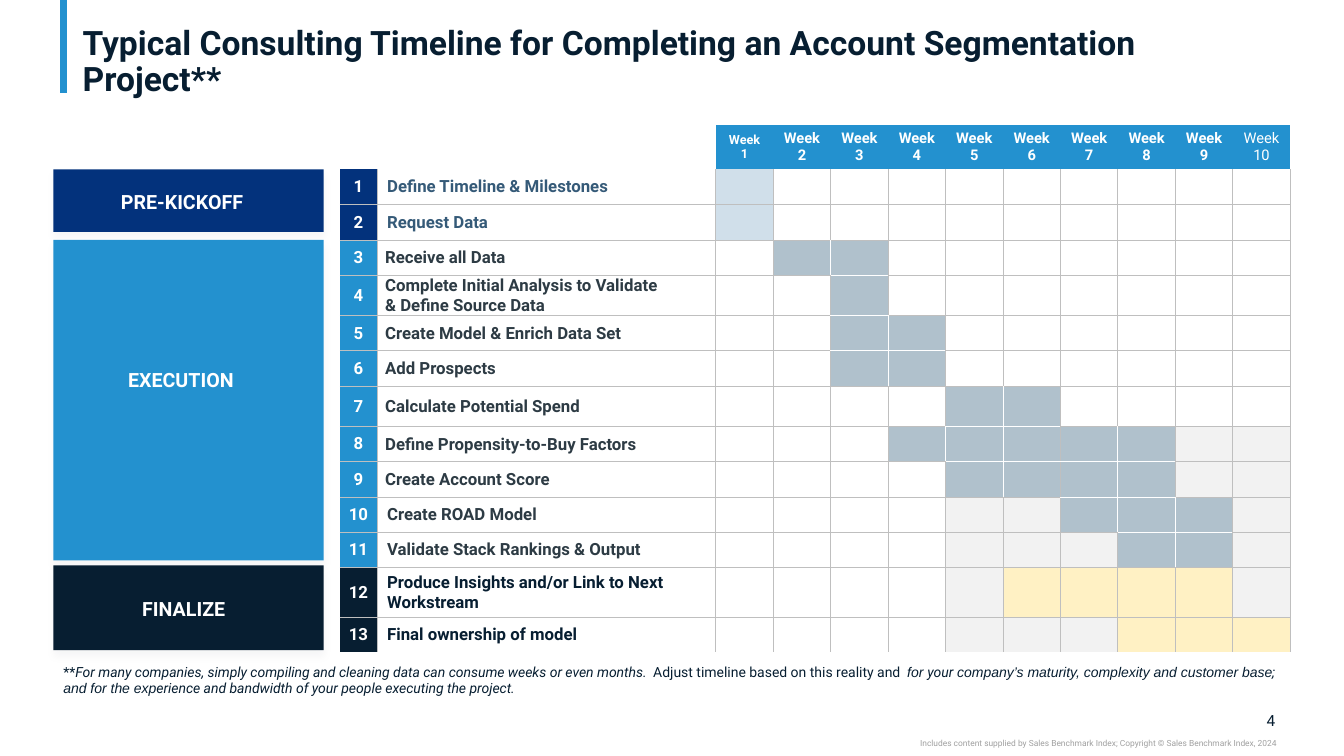
from dataclasses import dataclass

from lxml import etree
from pptx import Presentation
from pptx import util as u
from pptx.enum import shapes, text
from pptx.dml.color import RGBColor
from pptx.oxml import ns

COLOURS = {
    "ink": "071E31", "blue": "2391CF", "navy": "03327C", "white": "FFFFFF",
    "grid": "BFBFBF", "slate": "355A78", "charcoal": "2D3B44", "credit": "A0A0A0",
    "pale": "D0DFEA", "steel": "B0C1CC", "yellow": "FFF1C4", "idle": "F2F2F2",
}
WEEKS = 10
LAST_WEEK_BEFORE_REVIEW = 6
NORMAL_INSETS = (0.1, 0.05, 0.1, 0.05)
TIGHT_INSETS = (0.08, 0.01, 0.01, 0)
NO_INSETS = (0, 0, 0, 0)
LEFT, CENTRE, RIGHT = text.PP_ALIGN.LEFT, text.PP_ALIGN.CENTER, text.PP_ALIGN.RIGHT
TOP, MIDDLE = text.MSO_ANCHOR.TOP, text.MSO_ANCHOR.MIDDLE


@dataclass
class Span:
    words: str
    size: float
    colour: str = "ink"
    bold: bool = False
    italic: bool = False
    font: str = "Roboto"


@dataclass
class Phase:
    name: str
    fill: str
    task_colour: str
    bar: str
    top: float
    height: float
    label_at: tuple[float, float, float]


@dataclass
class Task:
    name: str
    phase: Phase
    start: int
    end: int
    idle_from: int = WEEKS + 1
    height: float = 0.35
    insets: tuple = NORMAL_INSETS

    def week_fill(self, week: int) -> str:
        if self.start <= week <= self.end:
            return self.phase.bar
        return "idle" if week >= self.idle_from else "white"


PRE = Phase("PRE-KICKOFF", "navy", "slate", "pale", 1.68, 0.62, (1.2, 1.88, 1.34))
EXECUTION = Phase("EXECUTION", "blue", "charcoal", "steel", 2.38, 3.18, (1.27, 3.65, 1.21))
FINALIZE = Phase("FINALIZE", "ink", "ink", "yellow", 5.61, 0.84, (1.41, 5.92, 0.92))

TASKS = [
    Task("Define Timeline & Milestones", PRE, 1, 1),
    Task("Request Data", PRE, 1, 1),
    Task("Receive all Data", EXECUTION, 2, 3, insets=TIGHT_INSETS),
    Task("Complete Initial Analysis to Validate \n& Define Source Data", EXECUTION, 3, 3,
         height=0.28, insets=TIGHT_INSETS),
    Task("Create Model & Enrich Data Set", EXECUTION, 3, 4, insets=TIGHT_INSETS),
    Task("Add Prospects", EXECUTION, 3, 4, insets=TIGHT_INSETS),
    Task("Calculate Potential Spend", EXECUTION, 5, 6, height=0.4, insets=TIGHT_INSETS),
    Task("Define Propensity-to-Buy Factors", EXECUTION, 4, 8, 9, insets=TIGHT_INSETS),
    Task("Create Account Score", EXECUTION, 5, 8, 9, insets=TIGHT_INSETS),
    Task("Create ROAD Model", EXECUTION, 7, 9, 5),
    Task("Validate Stack Rankings & Output", EXECUTION, 8, 9, 5),
    Task("Produce Insights and/or Link to Next Workstream", FINALIZE, 6, 9, 5),
    Task("Final ownership of model", FINALIZE, 8, 10, 5),
]

FOOTNOTE = [
    Span("**", 10),
    Span("For many companies, simply compiling and cleaning data can consume weeks "
         "or even months.  ", 10, italic=True),
    Span("Adjust timeline based on this reality and  ", 10),
    Span("for ", 10, italic=True, font="Arial"),
    Span("your", 10, italic=True),
    Span(" company’s maturity, complexity and customer base", 10, italic=True, font="Arial"),
    Span("; ", 10, italic=True),
    Span("and for the exp", 10, italic=True, font="Arial"),
    Span("erience and bandwidth of your people executing the project.", 10, italic=True),
]


def rgb(name: str) -> RGBColor:
    return RGBColor.from_string(COLOURS[name])


def set_insets(holder, insets: tuple) -> None:
    for side, inset in zip(("left", "top", "right", "bottom"), insets):
        setattr(holder, f"margin_{side}", u.Inches(inset))


def write(frame, spans: list[Span], align=LEFT) -> None:
    para = frame.paragraphs[0]
    para.alignment = align
    for span in spans:
        for number, line in enumerate(span.words.split("\n")):
            if number:
                para.add_line_break()
            run = para.add_run()
            run.text = line
            formats = {"size": u.Pt(span.size), "bold": span.bold,
                       "italic": span.italic, "name": span.font}
            for key, value in formats.items():
                setattr(run.font, key, value)
            run.font.color.rgb = rgb(span.colour)


def format_frame(frame, insets: tuple, anchor) -> None:
    formats = {"word_wrap": True, "auto_size": text.MSO_AUTO_SIZE.NONE,
               "vertical_anchor": anchor}
    for key, value in formats.items():
        setattr(frame, key, value)
    set_insets(frame, insets)


def add_text(page, at: tuple, spans: list[Span], align=LEFT, insets=NO_INSETS, anchor=TOP) -> None:
    box = page.shapes.add_textbox(*map(u.Inches, at))
    format_frame(box.text_frame, insets, anchor)
    write(box.text_frame, spans, align)


def add_title(page) -> None:
    title = page.shapes.title
    places = {"left": 0.72, "top": 0.02, "width": 12.08, "height": 1.2}
    for key, value in places.items():
        setattr(title, key, u.Inches(value))
    format_frame(title.text_frame, NORMAL_INSETS, MIDDLE)
    words = "Typical Consulting Timeline for Completing an Account Segmentation Project**"
    write(title.text_frame, [Span(words, 24, bold=True)])
    title.text_frame.paragraphs[0].line_spacing = 0.9


def add_accent(page) -> None:
    accent = page.shapes.add_connector(
        shapes.MSO_CONNECTOR.STRAIGHT, *map(u.Inches, (0.63, 0, 0.63, 0.92)))
    accent.line.color.rgb = rgb("blue")
    accent.line.width = u.Pt(5)
    etree.SubElement(accent._element.spPr, ns.qn("a:effectLst"))


def add_phase(page, phase: Phase) -> None:
    box = page.shapes.add_shape(
        shapes.MSO_SHAPE.RECTANGLE, *map(u.Inches, (0.53, phase.top, 2.68, phase.height)))
    box.fill.solid()
    box.fill.fore_color.rgb = rgb(phase.fill)
    box.line.fill.background()
    box.shadow.inherit = False
    effects = box._element.spPr.find(ns.qn("a:effectLst"))
    shadow = etree.SubElement(effects, ns.qn("a:outerShdw"), blurRad=str(u.Pt(6)),
                              dist=str(u.Pt(4)), dir="5400000", rotWithShape="0")
    colour = etree.SubElement(shadow, ns.qn("a:srgbClr"), val=COLOURS["ink"])
    etree.SubElement(colour, ns.qn("a:alpha"), val="4000")


def paint(cell, fill: str, borders: dict) -> None:
    properties = cell._tc.get_or_add_tcPr()
    for side in "LRTB":
        line = etree.SubElement(properties, ns.qn(f"a:ln{side}"), w=str(u.Pt(0.75)))
        colour = borders.get(side)
        paint_kind = etree.SubElement(line, ns.qn("a:solidFill" if colour else "a:noFill"))
        if colour:
            etree.SubElement(paint_kind, ns.qn("a:srgbClr"), val=COLOURS[colour])
    cell.fill.solid()
    cell.fill.fore_color.rgb = rgb(fill)


def cell_borders(fills: list[list[str]], row: int, column: int) -> dict:
    def edge(other_row: int, other_column: int) -> str:
        week_boundary = {column - 1, other_column - 1}
        review = week_boundary == {LAST_WEEK_BEFORE_REVIEW, LAST_WEEK_BEFORE_REVIEW + 1}
        inside = other_row < len(fills) and other_column < len(fills[0])
        joined = inside and fills[row][column] == fills[other_row][other_column] == "steel"
        return "white" if joined and not review else "grid"

    if row == 0:
        return {}
    borders = {"R": edge(row, column + 1)}
    if column > 0:
        borders["L"] = edge(row, column - 1)
    if row > 1:
        borders["T"] = edge(row - 1, column)
    if row < len(TASKS):
        borders["B"] = edge(row + 1, column)
    return borders


def add_schedule(page) -> None:
    weeks = range(1, WEEKS + 1)
    fills = [["white"] * 2 + ["blue"] * WEEKS]
    fills += [[task.phase.fill, "white"] + [task.week_fill(week) for week in weeks]
              for task in TASKS]
    table = page.shapes.add_table(
        len(fills), WEEKS + 2, *map(u.Inches, (3.37, 1.24, 9.43, 5.0))).table
    table.first_row = table.horz_banding = False
    for column, width in zip(table.columns, [0.37, 3.36] + [0.57] * WEEKS):
        column.width = u.Inches(width)
    for row, height in zip(table.rows, [0.36] + [task.height for task in TASKS]):
        row.height = u.Inches(height)
    for row, row_fills in enumerate(fills):
        for column, fill in enumerate(row_fills):
            cell = table.cell(row, column)
            cell.vertical_anchor = MIDDLE
            set_insets(cell, NO_INSETS)
            paint(cell, fill, cell_borders(fills, row, column))
    for week in weeks:
        cell = table.cell(0, week + 1)
        set_insets(cell, NORMAL_INSETS)
        heading = Span(f"Week {week}", 9 if week == 1 else 10.5, "white", week < WEEKS)
        write(cell.text_frame, [heading], CENTRE)
    for number, task in enumerate(TASKS, 1):
        number_cell, name_cell = table.cell(number, 0), table.cell(number, 1)
        set_insets(number_cell, NORMAL_INSETS if number < 10 else NO_INSETS)
        set_insets(name_cell, task.insets)
        write(number_cell.text_frame, [Span(str(number), 12, "white", True)], CENTRE)
        write(name_cell.text_frame, [Span(task.name, 12, task.phase.task_colour, True)])


def main() -> None:
    deck = Presentation()
    deck.slide_width, deck.slide_height = u.Inches(13.33), u.Inches(7.5)
    page = deck.slides.add_slide(deck.slide_layouts[5])
    add_accent(page)
    add_text(page, (12.32, 7.05, 0.33, 0.19), [Span("4", 11)], RIGHT, anchor=MIDDLE)
    credit = ("Includes content supplied by Sales Benchmark Index; "
              "Copyright © Sales Benchmark Index, 2024")
    add_text(page, (7.5, 7.32, 5.16, 0.1), [Span(credit, 6, "credit")], RIGHT)
    add_title(page)
    add_text(page, (0.53, 6.53, 12.23, 0.44), FOOTNOTE, insets=NORMAL_INSETS)
    add_schedule(page)
    phases = (PRE, FINALIZE, EXECUTION)
    for phase in phases:
        add_phase(page, phase)
    for phase in phases:
        add_text(page, (*phase.label_at, 0.24), [Span(phase.name, 14, "white", True)],
                 anchor=MIDDLE)
    deck.save("out.pptx")


if __name__ == "__main__":
    main()
